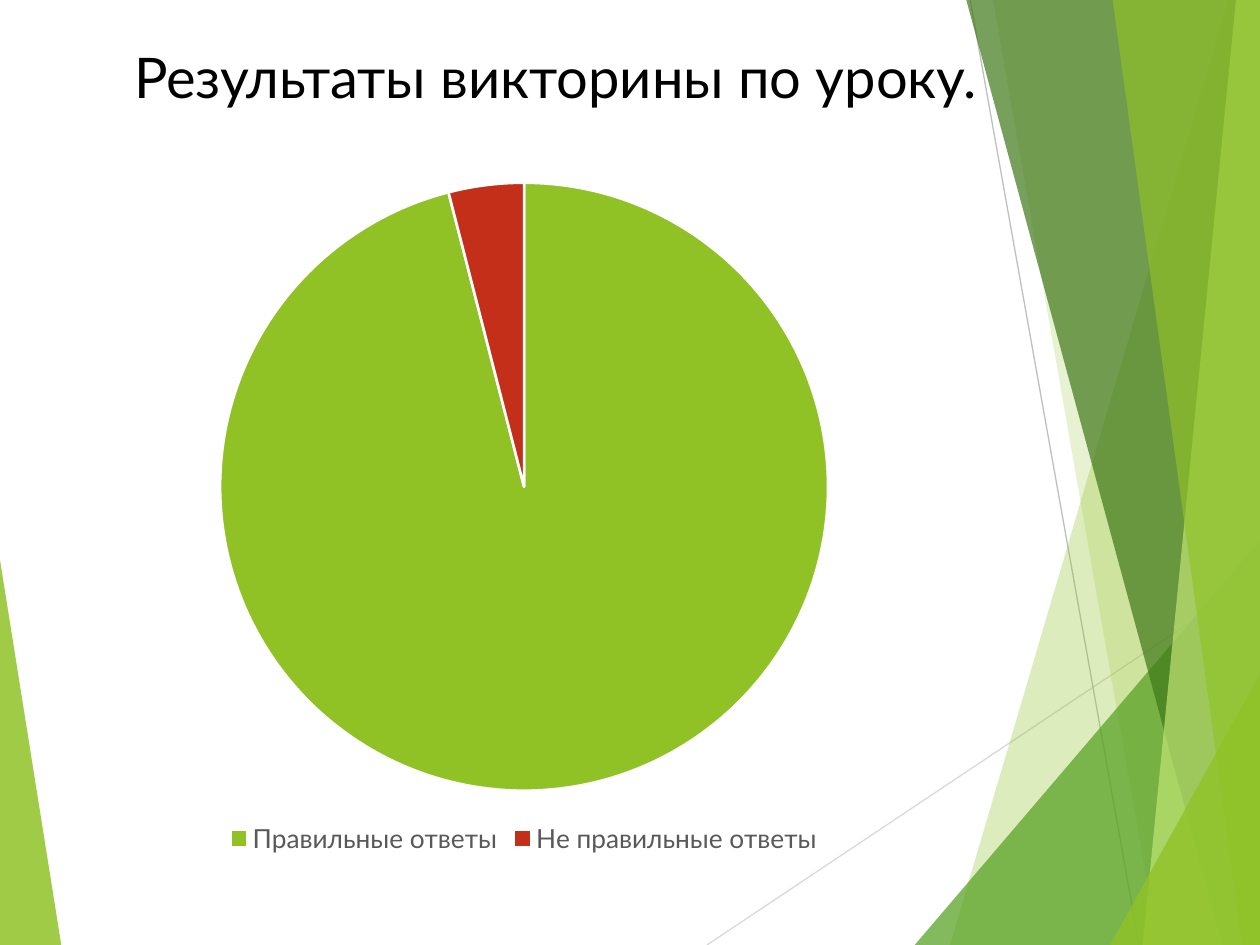
from dataclasses import dataclass

from lxml.etree import Element, SubElement
from pptx import Presentation
from pptx.chart.chart import Legend
from pptx.chart.data import CategoryChartData
from pptx.dml.color import RGBColor
from pptx.enum.chart import XL_CHART_TYPE, XL_LEGEND_POSITION
from pptx.enum.shapes import MSO_CONNECTOR
from pptx.enum.text import MSO_AUTO_SIZE, PP_ALIGN
from pptx.oxml.ns import qn
from pptx.slide import Slide
from pptx.util import Pt

WIDTH, HEIGHT = 720, 540
Point = tuple[float, float]


@dataclass(frozen=True)
class Theme:
    font: str = "Lato"
    title_size: int = 32
    legend_size: int = 15
    chart_size: int = 10
    text: str = "000000"
    muted: str = "595959"
    white: str = "FFFFFF"
    lime: str = "90C226"
    green: str = "54A021"
    forest: str = "3F7819"
    pale: str = "C0E474"
    yellow: str = "E6B91E"
    orange: str = "E76618"
    red: str = "C42F1A"
    line: str = "D9D9D9"
    dark_line: str = "BFBFBF"


@dataclass(frozen=True)
class Facet:
    color: str
    opacity: int
    points: tuple[Point, ...]


@dataclass(frozen=True)
class Ray:
    color: str
    start: Point
    end: Point


@dataclass(frozen=True)
class Answer:
    color: str
    label: str = ""
    share: int | None = None


THEME = Theme()


def right_band(color: str, opacity: int, top: float, bottom: float) -> Facet:
    """A full-height facet from a slanted left side to the slide's right edge."""
    return Facet(color, opacity, ((top, 0), (bottom, HEIGHT), (WIDTH, HEIGHT), (WIDTH, 0)))


def right_corner(color: str, opacity: int, left: float, top: float) -> Facet:
    """A triangle in the slide's lower right corner."""
    return Facet(color, opacity, ((left, HEIGHT), (WIDTH, top), (WIDTH, HEIGHT)))


LEFT_FACET = Facet(THEME.lime, 85, ((0, 320), (35, HEIGHT), (0, HEIGHT)))
RAYS = (
    Ray(THEME.line, (404, HEIGHT), (WIDTH, 329)),
    Ray(THEME.dark_line, (554.4, 0), (650.9, HEIGHT)),
)
RIGHT_FACETS = (
    right_band(THEME.lime, 30, 702, 542.9),
    right_band(THEME.lime, 20, 567.4, 661.7),
    right_corner(THEME.green, 72, 522.7, 308.9),
    right_band(THEME.forest, 70, 552.2, 698.4),
    right_band(THEME.pale, 70, 706.3, 653),
    right_band(THEME.lime, 65, 635.8, 709.9),
    right_corner(THEME.lime, 80, 634.3, 385.2),
)
ANSWERS = (
    Answer(THEME.lime, "Правильные ответы", 96),
    Answer(THEME.green),
    Answer(THEME.yellow),
    Answer(THEME.orange),
    Answer(THEME.red, "Не правильные ответы", 4),
)


def rgb(color: str) -> RGBColor:
    return RGBColor.from_string(color)


def draw_facet(page: Slide, facet: Facet) -> None:
    first, *others = [(Pt(x), Pt(y)) for x, y in facet.points]
    builder = page.shapes.build_freeform(*first)
    builder.add_line_segments(others, close=True)
    shape = builder.convert_to_shape()
    shape.shadow.inherit = False
    shape.line.fill.background()
    shape.fill.solid()
    shape.fill.fore_color.rgb = rgb(facet.color)
    color = shape.fill._xPr.find(qn("a:solidFill"))[0]
    SubElement(color, qn("a:alpha"), val=str(facet.opacity * 1000))


def draw_ray(page: Slide, ray: Ray) -> None:
    ends = [Pt(value) for value in (*ray.start, *ray.end)]
    connector = page.shapes.add_connector(MSO_CONNECTOR.STRAIGHT, *ends)
    connector.line.color.rgb = rgb(ray.color)
    connector.line.width = Pt(0.75)
    SubElement(connector._element.spPr, qn("a:effectLst"))


def hide_unlabelled(legend: Legend, answers: tuple[Answer, ...]) -> None:
    """Leave answers without a label out of the legend."""
    previous = legend._element.find(qn("c:legendPos"))
    for index, answer in enumerate(answers):
        if not answer.label:
            entry = Element(qn("c:legendEntry"))
            SubElement(entry, qn("c:idx"), val=str(index))
            SubElement(entry, qn("c:delete"), val="1")
            previous.addnext(entry)
            previous = entry


def draw_pie(page: Slide, answers: tuple[Answer, ...]) -> None:
    data = CategoryChartData()
    data.categories = [answer.label for answer in answers]
    data.add_series("Series 1", [answer.share for answer in answers])
    chart = page.shapes.add_chart(
        XL_CHART_TYPE.PIE, Pt(59.5), Pt(94.5), Pt(480), Pt(396.5), data
    ).chart
    chart.has_title = False
    chart.font.name = THEME.font
    chart.font.size = Pt(THEME.chart_size)
    chart.font.color.rgb = rgb(THEME.text)

    chart.has_legend = True
    legend = chart.legend
    legend.position = XL_LEGEND_POSITION.BOTTOM
    legend.include_in_layout = False
    legend.font.name = THEME.font
    legend.font.size = Pt(THEME.legend_size)
    legend.font.color.rgb = rgb(THEME.muted)
    hide_unlabelled(legend, answers)

    plot = chart.plots[0]
    plot.vary_by_categories = True
    for index, answer in enumerate(answers):
        slice_format = plot.series[0].points[index].format
        slice_format.fill.solid()
        slice_format.fill.fore_color.rgb = rgb(answer.color)
        slice_format.line.color.rgb = rgb(THEME.white)
        slice_format.line.width = Pt(1.5)


def draw_title(page: Slide, text: str) -> None:
    box = page.shapes.add_textbox(Pt(0), Pt(21), Pt(635.5), Pt(46))
    box.text_frame.word_wrap = True
    box.text_frame.auto_size = MSO_AUTO_SIZE.SHAPE_TO_FIT_TEXT
    para = box.text_frame.paragraphs[0]
    para.text = text
    para.alignment = PP_ALIGN.CENTER
    para.font.name = THEME.font
    para.font.size = Pt(THEME.title_size)
    para.font.color.rgb = rgb(THEME.text)


def main() -> None:
    deck = Presentation()
    deck.slide_width, deck.slide_height = Pt(WIDTH), Pt(HEIGHT)
    page = deck.slides.add_slide(deck.slide_layouts[6])
    page.background.fill.solid()
    page.background.fill.fore_color.rgb = rgb(THEME.white)

    draw_facet(page, LEFT_FACET)
    for ray in RAYS:
        draw_ray(page, ray)
    for facet in RIGHT_FACETS:
        draw_facet(page, facet)
    draw_pie(page, ANSWERS)
    draw_title(page, "Результаты викторины по уроку.")
    deck.save("out.pptx")


if __name__ == "__main__":
    main()
